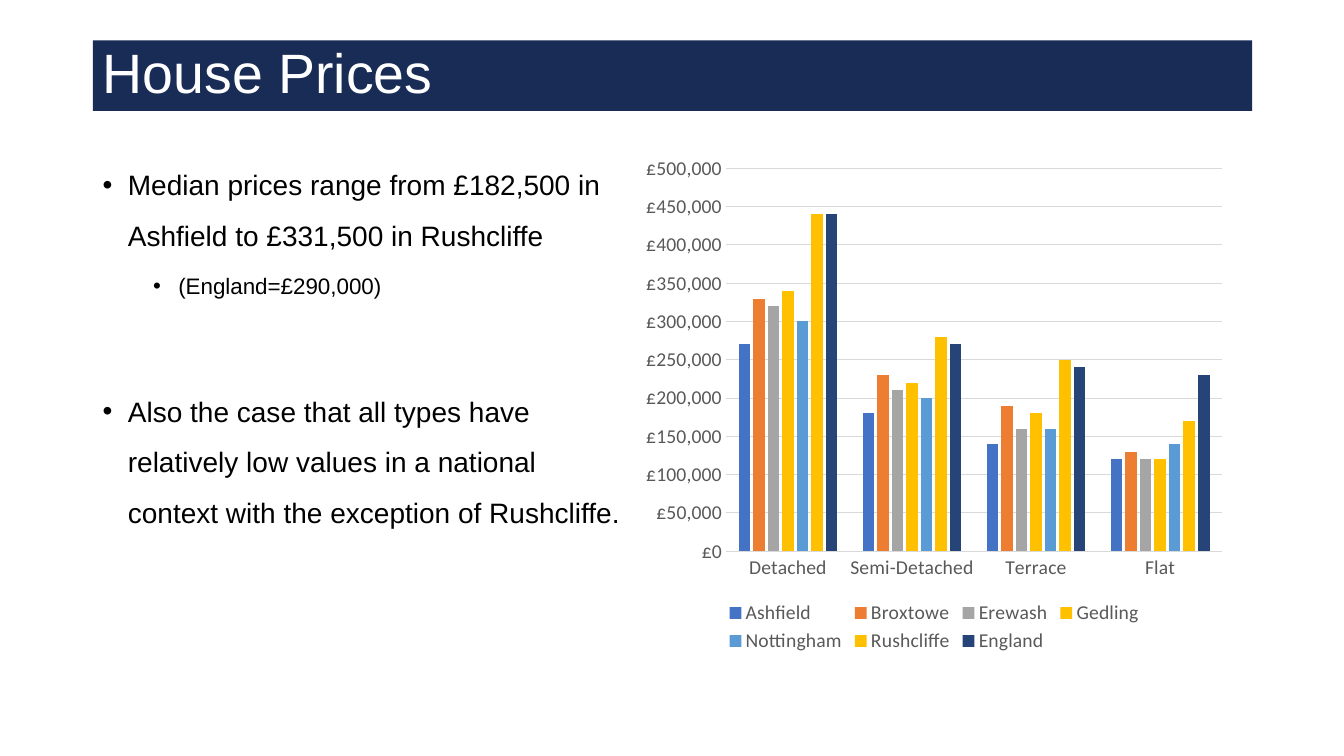
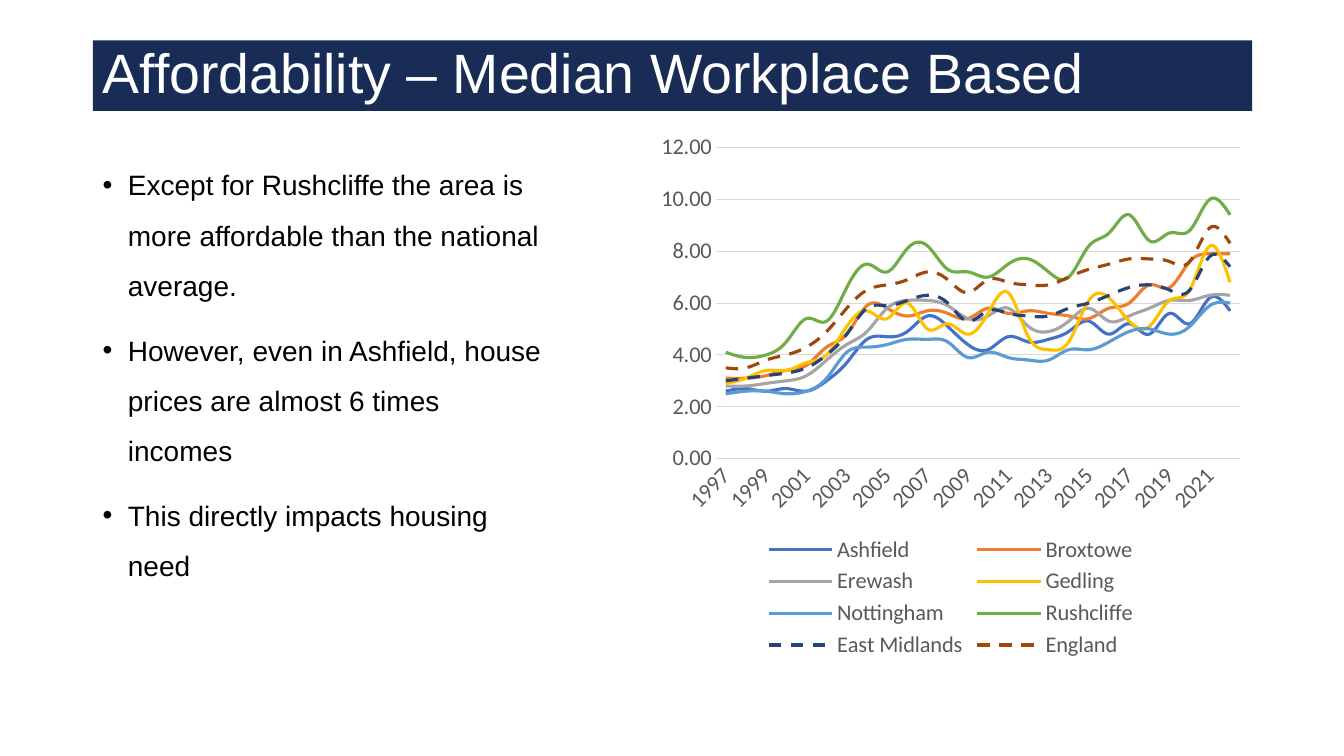
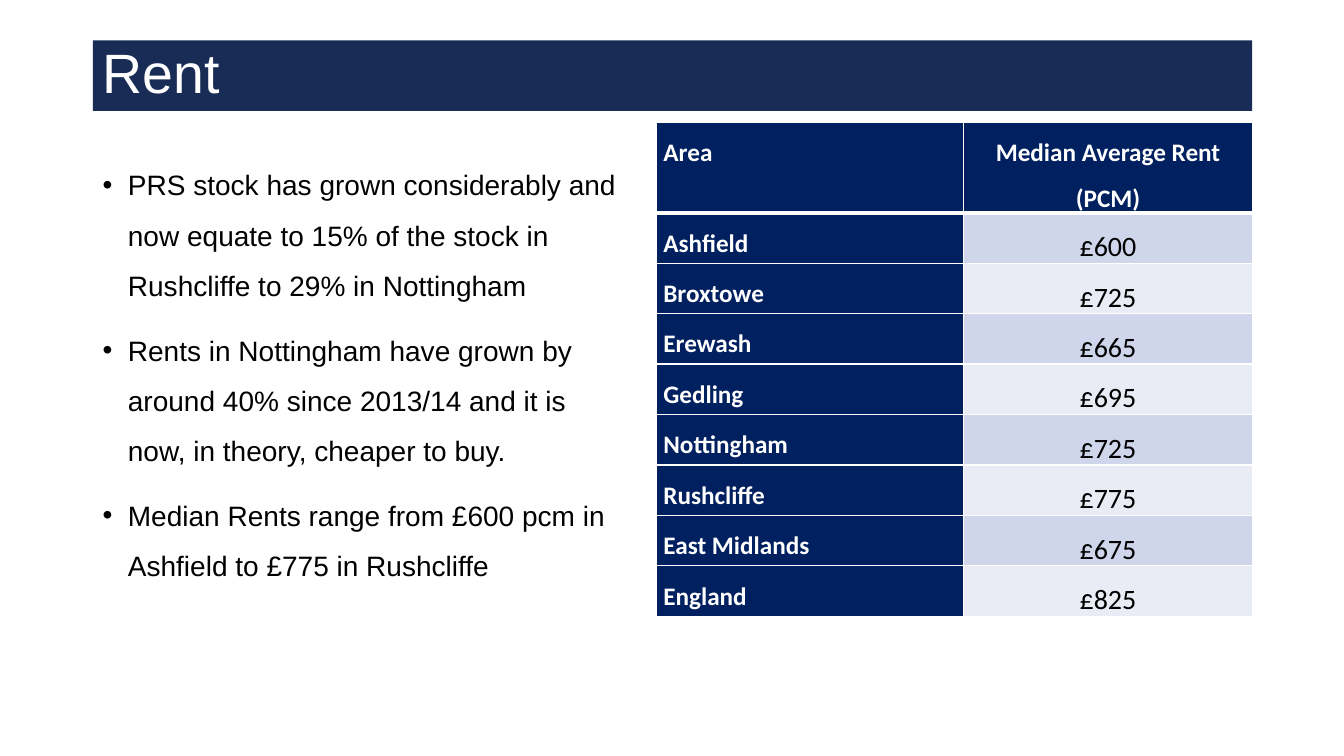
from lxml.etree import SubElement
from pptx import Presentation
from pptx.chart.data import CategoryChartData
from pptx.dml.color import RGBColor
from pptx.enum.chart import XL_CHART_TYPE, XL_LEGEND_POSITION, XL_TICK_MARK
from pptx.enum.dml import MSO_LINE
from pptx.enum.text import MSO_ANCHOR, MSO_AUTO_SIZE, PP_ALIGN
from pptx.oxml.ns import qn
from pptx.util import Inches, Pt

# Shared colours
BAND, NAVY, WHITE, BLACK = "182C56", "002060", "FFFFFF", "000000"
AXIS_TEXT, GRID = "595959", "D9D9D9"
ROW_TINTS = ("CFD5EA", "E9EBF5")
AREA_COLOURS = {
    "Ashfield": "4472C4", "Broxtowe": "ED7D31", "Erewash": "A5A5A5",
    "Gedling": "FFC000", "Nottingham": "5B9BD5", "Rushcliffe": "70AD47",
    "East Midlands": "264478", "England": "9E480E",
}


def colour(value):
    return RGBColor.from_string(value)


class Deck:
    """Holds the presentation style and the slide being built."""

    def __init__(self):
        self.prs = Presentation()
        self.prs.slide_width, self.prs.slide_height = Inches(13.33), Inches(7.5)
        self.slide = None

    def box(self, left, top, width, height):
        return [Inches(v) for v in (left, top, width, height)]

    def style(self, font, size, value, name="Arial", bold=False):
        for key, setting in {"size": Pt(size), "name": name, "bold": bold}.items():
            setattr(font, key, setting)
        font.color.rgb = colour(value)

    def new_slide(self, heading):
        self.slide = self.prs.slides.add_slide(self.prs.slide_layouts[5])
        title = self.slide.shapes.title
        places = zip(("left", "top", "width", "height"), self.box(0.92, 0.4, 11.5, 0.7))
        for key, setting in places:
            setattr(title, key, setting)
        title.fill.solid()
        title.fill.fore_color.rgb = colour(BAND)
        frame = title.text_frame
        frame.text = heading
        frame.auto_size = MSO_AUTO_SIZE.NONE
        frame.vertical_anchor = MSO_ANCHOR.MIDDLE
        paragraph = frame.paragraphs[0]
        paragraph.alignment = PP_ALIGN.LEFT
        paragraph.line_spacing = 0.9
        self.style(paragraph.font, 39.6, WHITE)

    def bullets(self, width, height, points):
        """Each point is (text, level, space before)."""
        frame = self.slide.shapes.add_textbox(*self.box(0.92, 1.45, width, height)).text_frame
        frame.word_wrap = True
        for index, (text, level, space) in enumerate(points):
            paragraph = frame.paragraphs[0] if index == 0 else frame.add_paragraph()
            paragraph.text = text
            paragraph.level = level
            paragraph.line_spacing = 1.5
            paragraph.space_before = Pt(space)
            props = paragraph._p.get_or_add_pPr()
            props.set("marL", str(Inches(0.25 + 0.5 * level)))
            props.set("indent", str(Inches(-0.25)))
            SubElement(props, qn("a:buFont"), typeface="Arial")
            SubElement(props, qn("a:buChar"), char="•")
            self.style(paragraph.font, 16 if level else 20, BLACK)

    def chart(self, kind, place, size, categories, series, number_format, top, step):
        data = CategoryChartData()
        data.categories = categories
        for name, values in series.items():
            data.add_series(name, values)
        chart = self.slide.shapes.add_chart(kind, *self.box(*place), data).chart
        chart.has_title = False
        chart.has_legend = True
        chart.legend.position = XL_LEGEND_POSITION.BOTTOM
        chart.legend.include_in_layout = False
        chart.plots[0].vary_by_categories = False
        category, value = chart.category_axis, chart.value_axis
        for font in (chart.font, chart.legend.font,
                     category.tick_labels.font, value.tick_labels.font):
            self.style(font, size, AXIS_TEXT, "Calibri")
        for axis in (category, value):
            axis.major_tick_mark = axis.minor_tick_mark = XL_TICK_MARK.NONE
        for key, setting in {"minimum_scale": 0, "maximum_scale": top,
                             "major_unit": step}.items():
            setattr(value, key, setting)
        value.tick_labels.number_format = number_format
        value.tick_labels.number_format_is_linked = False
        value.format.line.fill.background()
        for line in (category.format.line, value.major_gridlines.format.line):
            line.color.rgb = colour(GRID)
            line.width = Pt(0.75)
        return chart

    def column_chart(self, place, categories, series, colours):
        chart = self.chart(XL_CHART_TYPE.COLUMN_CLUSTERED, place, 14, categories,
                           series, '"£"#,##0', 500000, 50000)
        plot = chart.plots[0]
        plot.gap_width, plot.overlap = 219, -27
        for area in plot.series:
            area.format.fill.solid()
            area.format.fill.fore_color.rgb = colour(colours[area.name])

    def line_chart(self, place, categories, series, dashed):
        chart = self.chart(XL_CHART_TYPE.LINE, place, 16, categories,
                           series, "#,##0.00", 12, 2)
        for area in chart.plots[0].series:
            area.smooth = True
            area.format.line.color.rgb = colour(AREA_COLOURS[area.name])
            area.format.line.width = Pt(2.25)
            if area.name in dashed:
                area.format.line.dash_style = MSO_LINE.DASH

    def cell(self, cell, text, fill, align, size, value, bold, bottom):
        cell.text = text
        for key, setting in {"margin_left": Inches(0.07), "margin_right": Inches(0.07),
                             "margin_top": 0, "margin_bottom": 0}.items():
            setattr(cell, key, setting)
        paragraph = cell.text_frame.paragraphs[0]
        for key, setting in {"alignment": align, "line_spacing": 1.5,
                             "space_after": Pt(18)}.items():
            setattr(paragraph, key, setting)
        self.style(paragraph.font, size, value, "Calibri", bold)
        # Borders come before the fill in the cell properties
        props = cell._tc.get_or_add_tcPr()
        for side, width in {"L": 1, "R": 1, "T": 1, "B": bottom}.items():
            line = SubElement(props, qn("a:ln" + side), w=str(Pt(width)))
            SubElement(SubElement(line, qn("a:solidFill")), qn("a:srgbClr"), val=WHITE)
        cell.fill.solid()
        cell.fill.fore_color.rgb = colour(fill)

    def table(self, place, widths, header, rows):
        frame = self.slide.shapes.add_table(len(rows) + 1, 2, *self.box(*place))
        table = frame.table
        table.horz_banding = False
        for column, width in zip(table.columns, widths):
            column.width = Inches(width)
        for index, (area, rent) in enumerate([header, *rows]):
            table.rows[index].height = Inches(0.46)
            is_header = index == 0
            bottom = 3 if is_header else 1
            self.cell(table.cell(index, 0), area, NAVY, PP_ALIGN.JUSTIFY,
                      18, WHITE, True, bottom)
            look = ((NAVY, PP_ALIGN.CENTER, 18, WHITE, True) if is_header else
                    (ROW_TINTS[(index - 1) % 2], PP_ALIGN.CENTER, 20, BLACK, False))
            self.cell(table.cell(index, 1), rent, *look, bottom)


def main():
    deck = Deck()

    # House prices
    deck.new_slide("House Prices")
    deck.bullets(5.37, 5.7, [
        ("Median prices range from £182,500 in Ashfield to £331,500 in Rushcliffe", 0, 0),
        ("(England=£290,000)", 1, 5),
        ("Also the case that all types have relatively low values in a national "
         "context with the exception of Rushcliffe.", 0, 56),
    ])
    deck.column_chart(
        (6.29, 1.45, 5.95, 5.07), ["Detached", "Semi-Detached", "Terrace", "Flat"], {
            "Ashfield": (270000, 180000, 140000, 120000),
            "Broxtowe": (330000, 230000, 190000, 130000),
            "Erewash": (320000, 210000, 160000, 120000),
            "Gedling": (340000, 220000, 180000, 120000),
            "Nottingham": (300000, 200000, 160000, 140000),
            "Rushcliffe": (440000, 280000, 250000, 170000),
            "England": (440000, 270000, 240000, 230000),
        }, {**AREA_COLOURS, "Rushcliffe": "FFC000", "England": "264478"})

    # Affordability
    deck.new_slide("Affordability – Median Workplace Based")
    deck.bullets(4.61, 5.26, [
        ("Except for Rushcliffe the area is more affordable than the national average.", 0, 0),
        ("However, even in Ashfield, house prices are almost 6 times incomes", 0, 10),
        ("This directly impacts housing need", 0, 10),
    ])
    deck.line_chart(
        (6.44, 1.22, 5.98, 5.36), [str(year) for year in range(1997, 2023)], {
            "Ashfield": (2.6, 2.7, 2.6, 2.7, 2.6, 3, 3.7, 4.6, 4.7, 4.9, 5.5, 5.1, 4.4,
                         4.2, 4.7, 4.5, 4.6, 4.9, 5.3, 4.8, 5.2, 4.8, 5.6, 5.2, 6.2, 5.7),
            "Broxtowe": (3.1, 3.1, 3.2, 3.4, 3.6, 4.3, 4.8, 5.9, 5.8, 5.5, 5.7, 5.6, 5.4,
                         5.8, 5.6, 5.7, 5.6, 5.5, 5.4, 5.8, 6, 6.7, 6.6, 7.6, 7.9, 7.9),
            "Erewash": (2.8, 2.8, 2.9, 3, 3.2, 3.8, 4.4, 4.9, 5.8, 6.1, 6.1, 5.9, 5.4,
                        5.5, 5.8, 5.1, 4.9, 5.3, 5.8, 5.3, 5.5, 5.8, 6.1, 6.1, 6.3, 6.3),
            "Gedling": (2.9, 3.1, 3.4, 3.4, 3.7, 4, 5.1, 5.7, 5.4, 6, 5, 5.2, 4.8,
                        5.6, 6.4, 4.7, 4.2, 4.5, 6.1, 6.2, 5.3, 5.1, 6.1, 6.5, 8.2, 6.8),
            "Nottingham": (2.5, 2.6, 2.6, 2.5, 2.6, 3.1, 4.1, 4.3, 4.4, 4.6, 4.6, 4.5, 3.9,
                           4.1, 3.9, 3.8, 3.8, 4.2, 4.2, 4.5, 4.9, 5, 4.8, 5.1, 5.9, 6),
            "Rushcliffe": (4.1, 3.9, 4, 4.5, 5.4, 5.3, 6.6, 7.5, 7.2, 8.1, 8.2, 7.3, 7.2,
                           7, 7.5, 7.7, 7.2, 7, 8.2, 8.7, 9.4, 8.4, 8.7, 8.8, 10, 9.4),
            "East Midlands": (3, 3.1, 3.2, 3.3, 3.5, 4, 4.8, 5.8, 5.9, 6.1, 6.3, 6, 5.3,
                              5.7, 5.6, 5.5, 5.5, 5.8, 6, 6.3, 6.6, 6.7, 6.5, 6.5, 7.8, 7.4),
            "England": (3.5, 3.5, 3.8, 4, 4.3, 4.9, 5.8, 6.5, 6.7, 6.9, 7.2, 6.9, 6.4,
                        6.9, 6.8, 6.7, 6.7, 7, 7.3, 7.5, 7.7, 7.7, 7.6, 7.6, 8.9, 8.3),
        }, ("East Midlands", "England"))

    # Rent
    deck.new_slide("Rent")
    deck.bullets(5.42, 5.26, [
        ("PRS stock has grown considerably and now equate to 15% of the stock in "
         "Rushcliffe to 29% in Nottingham", 0, 0),
        ("Rents in Nottingham have grown by around 40% since 2013/14 and it is now, "
         "in theory, cheaper to buy.", 0, 10),
        ("Median Rents range from £600 pcm in Ashfield to £775 in Rushcliffe", 0, 10),
    ])
    deck.table((6.51, 1.21, 5.91, 4.14), (3.05, 2.86), ("Area", "Median Average Rent (PCM)"), [
        ("Ashfield", "£600"), ("Broxtowe", "£725"), ("Erewash", "£665"),
        ("Gedling", "£695"), ("Nottingham", "£725"), ("Rushcliffe", "£775"),
        ("East Midlands", "£675"), ("England", "£825"),
    ])

    deck.prs.save("out.pptx")


if __name__ == "__main__":
    main()
